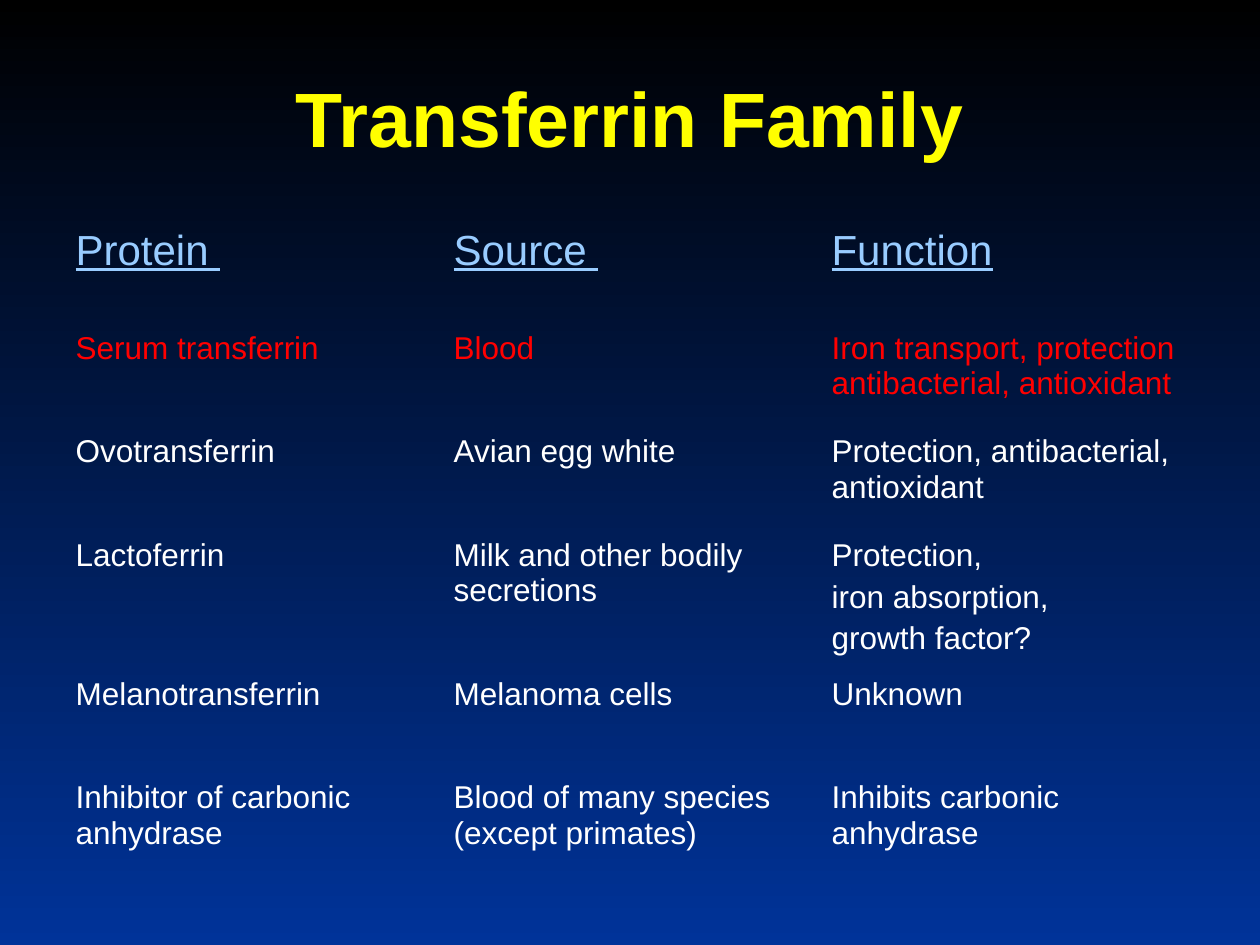
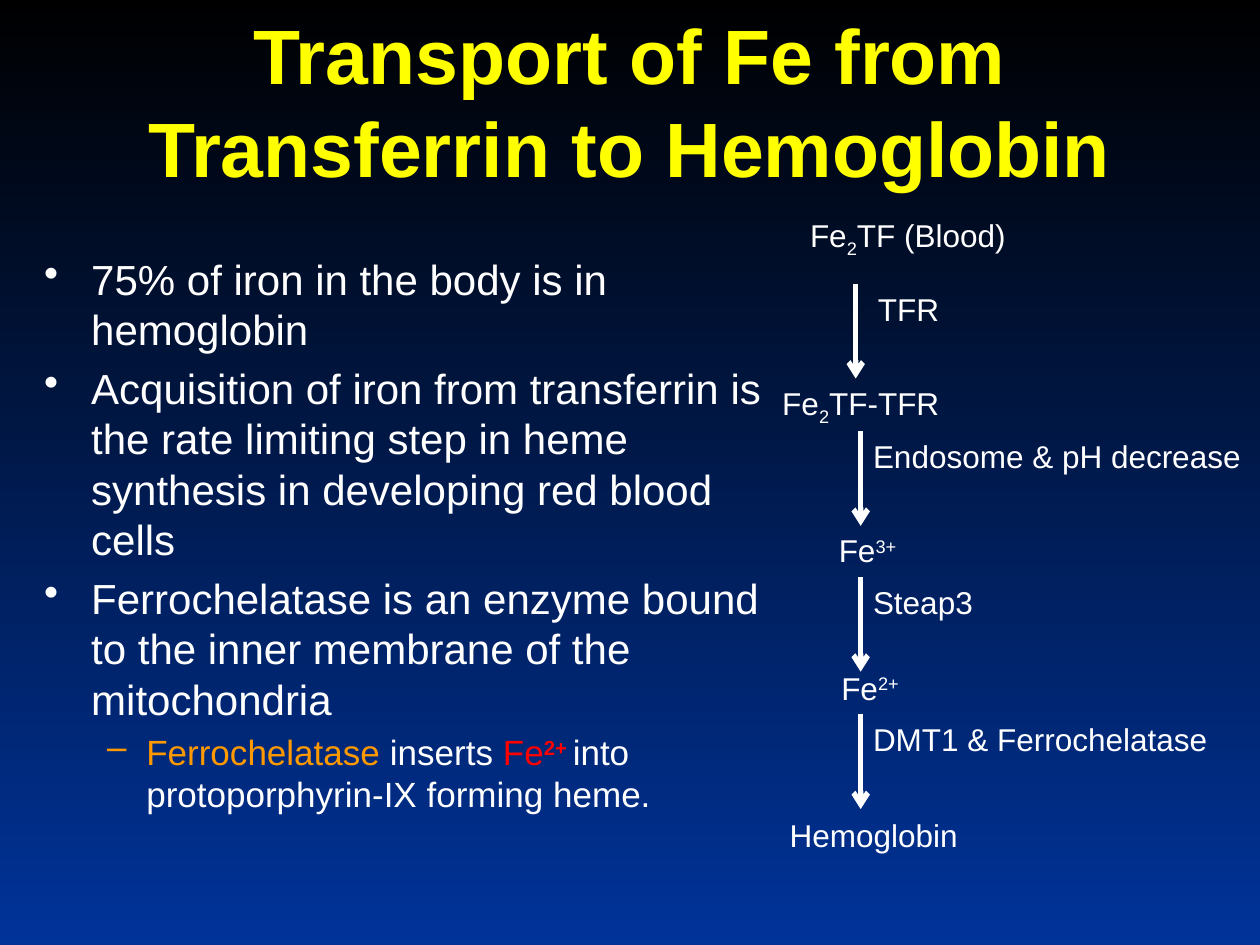
from lxml import etree
from pptx import Presentation
from pptx.dml.color import RGBColor
from pptx.enum import shapes, text
from pptx.oxml import ns
from pptx.util import Cm, Pt

FONT = "Arial"
WHITE, YELLOW, RED = "FFFFFF", "FFFF00", "FF0000"
ORANGE, LIGHT_BLUE = "FF9900", "99CCFF"
BACKGROUND = ("000000", "003399")
NO_STYLE_NO_GRID = "{2D5ABB26-0587-4C30-8999-92F81FD0307C}"

TITLE = {"size": 44, "color": YELLOW, "bold": True}
HEADER = {"size": 24, "color": LIGHT_BLUE, "underline": True}
CELL = {"size": 18, "color": WHITE}
HIGHLIGHT = {"size": 18, "color": RED}
LABEL = {"size": 18, "color": WHITE}
POINT = {"size": 24, "color": WHITE}
SUBPOINT = {"size": 20, "color": WHITE}
SUBSCRIPT, SUPERSCRIPT = {"baseline": -25}, {"baseline": 30}

FAMILY_TITLE = "Transferrin Family"
FAMILY = [
    (HEADER, ["Protein ", "Source ", "Function"]),
    (HIGHLIGHT, ["Serum transferrin", "Blood",
                 "Iron transport, protection antibacterial, antioxidant"]),
    (CELL, ["Ovotransferrin", "Avian egg white",
            "Protection, antibacterial, antioxidant"]),
    (CELL, ["Lactoferrin", "Milk and other bodily secretions",
            "Protection,\niron absorption,\ngrowth factor?"]),
    (CELL, ["Melanotransferrin", "Melanoma cells", "Unknown"]),
    (CELL, ["Inhibitor of carbonic anhydrase",
            "Blood of many species (except primates)",
            "Inhibits carbonic anhydrase"]),
]

TRANSPORT_TITLE = "Transport of Fe from Transferrin to Hemoglobin"
POINTS = [
    "75% of iron in the body is in hemoglobin",
    "Acquisition of iron from transferrin is the rate limiting step "
    "in heme synthesis in developing red blood cells",
    "Ferrochelatase is an enzyme bound to the inner membrane of the mitochondria",
]
HEME_POINT = [
    ("Ferrochelatase", {"color": ORANGE}),
    (" inserts ", {}),
    ("Fe", {"color": RED}),
    ("2+ ", {"color": RED, "bold": True, **SUPERSCRIPT}),
    ("into protoporphyrin-IX forming heme.", {}),
]
# Runs, left, top, width in cm
STAGES = [
    ([("Fe", {}), ("2", SUBSCRIPT), ("TF (Blood)", {})], 16.08, 4.24, 5.28),
    ([("Fe", {}), ("2", SUBSCRIPT), ("TF-TFR", {})], 15.52, 7.62, 3.73),
    ([("Fe", {}), ("3+", SUPERSCRIPT)], 16.66, 10.59, 1.75),
    ([("Fe", {}), ("2+", SUPERSCRIPT)], 16.71, 13.36, 1.75),
    ([("Hemoglobin", {})], 15.67, 16.33, 3.94),
]
# Label, arrow x, arrow top, gap to label, label width in cm
STEPS = [
    ("TFR", 17.25, 5.72, 0.2, 1.75),
    ("Endosome & pH decrease", 17.35, 8.69, 0, 8),
    ("Steap3", 17.35, 11.63, 0, 2.54),
    ("DMT1 & Ferrochelatase", 17.35, 14.4, 0, 7.32),
]
ARROW_LENGTH, LABEL_HEIGHT = 1.91, 1.02


def rgb(color):
    return RGBColor.from_string(color)


def add_runs(paragraph, runs, style):
    """Add (text, overrides) runs on top of a base style."""
    for words, overrides in runs:
        look = {**style, **overrides}
        run = paragraph.add_run()
        run.text = words
        values = {"name": FONT, "size": Pt(look["size"]),
                  "bold": look.get("bold", False),
                  "underline": look.get("underline", False)}
        for name, value in values.items():
            setattr(run.font, name, value)
        run.font.color.rgb = rgb(look["color"])
        if "baseline" in look:
            run._r.get_or_add_rPr().set("baseline", str(look["baseline"] * 1000))


def next_paragraph(frame, size):
    """Return the empty first paragraph, or a new one spaced by 20% of its size."""
    if not frame.paragraphs[0].runs:
        return frame.paragraphs[0]
    paragraph = frame.add_paragraph()
    paragraph.space_before = Pt(size * 0.2)
    return paragraph


def set_bullet(paragraph, symbol, margin, hanging):
    properties = paragraph._p.get_or_add_pPr()
    properties.set("marL", str(Cm(margin)))
    properties.set("indent", str(-Cm(hanging)))
    etree.SubElement(properties, ns.qn("a:buChar")).set("char", symbol)


def add_frame(slide, left, top, width, height, **settings):
    frame = slide.shapes.add_textbox(
        Cm(left), Cm(top), Cm(width), Cm(height)).text_frame
    for name, value in {"word_wrap": True, **settings}.items():
        setattr(frame, name, value)
    return frame


def add_slide(presentation, title, title_top):
    slide = presentation.slides.add_slide(presentation.slide_layouts[6])
    fill = slide.background.fill
    fill.gradient()
    fill.gradient_angle = 270
    for stop, color in zip(fill.gradient_stops, BACKGROUND):
        stop.color.rgb = rgb(color)
    frame = add_frame(slide, 1.27, title_top, 22.86, 3.18,
                      vertical_anchor=text.MSO_ANCHOR.MIDDLE)
    paragraph = frame.paragraphs[0]
    paragraph.alignment = text.PP_ALIGN.CENTER
    add_runs(paragraph, [(title, {})], TITLE)
    return slide


def add_label(slide, runs, left, top, width, wrap=False):
    frame = add_frame(slide, left, top, width, LABEL_HEIGHT, word_wrap=wrap,
                      auto_size=text.MSO_AUTO_SIZE.SHAPE_TO_FIT_TEXT)
    add_runs(frame.paragraphs[0], runs, LABEL)


def add_down_arrow(slide, x, top):
    arrow = slide.shapes.add_connector(
        shapes.MSO_CONNECTOR.STRAIGHT, Cm(x), Cm(top), Cm(x), Cm(top + ARROW_LENGTH))
    arrow.line.color.rgb = rgb(WHITE)
    arrow.line.width = Pt(3)
    etree.SubElement(arrow.line._get_or_add_ln(), ns.qn("a:tailEnd")).set("type", "arrow")
    etree.SubElement(arrow._element.spPr, ns.qn("a:effectLst"))


def add_family_table(slide):
    row_height = 2.09
    frame = slide.shapes.add_table(
        len(FAMILY), 3, Cm(1.27), Cm(4.45), Cm(22.86), Cm(row_height * len(FAMILY)))
    table = frame.table
    table.first_row = table.horz_banding = False
    table._tbl.tblPr.find(ns.qn("a:tableStyleId")).text = NO_STYLE_NO_GRID
    for row, (style, entries) in zip(table.rows, FAMILY):
        row.height = Cm(row_height)
        for cell, entry in zip(row.cells, entries):
            cell.fill.background()
            for line in entry.split("\n"):
                paragraph = next_paragraph(cell.text_frame, style["size"])
                add_runs(paragraph, [(line, {})], style)


def add_points(slide):
    frame = add_frame(slide, 0.64, 4.98, 15.67, 11.96)
    for point in POINTS:
        paragraph = next_paragraph(frame, POINT["size"])
        set_bullet(paragraph, "•", 0.95, 0.95)
        add_runs(paragraph, [(point, {})], POINT)
    paragraph = next_paragraph(frame, SUBPOINT["size"])
    paragraph.level = 1
    set_bullet(paragraph, "–", 2.06, 0.79)
    add_runs(paragraph, HEME_POINT, SUBPOINT)


def add_pathway(slide):
    for index, (runs, left, top, width) in enumerate(STAGES):
        add_label(slide, runs, left, top, width, wrap=index == 0)
    for label, x, top, gap, width in STEPS:
        add_down_arrow(slide, x, top)
        add_label(slide, [(label, {})], x + gap, top, width)


def main():
    presentation = Presentation()
    presentation.slide_width, presentation.slide_height = Cm(25.4), Cm(19.05)
    add_family_table(add_slide(presentation, FAMILY_TITLE, 0.76))
    transport = add_slide(presentation, TRANSPORT_TITLE, 0.43)
    add_points(transport)
    add_pathway(transport)
    presentation.save("out.pptx")


if __name__ == "__main__":
    main()
